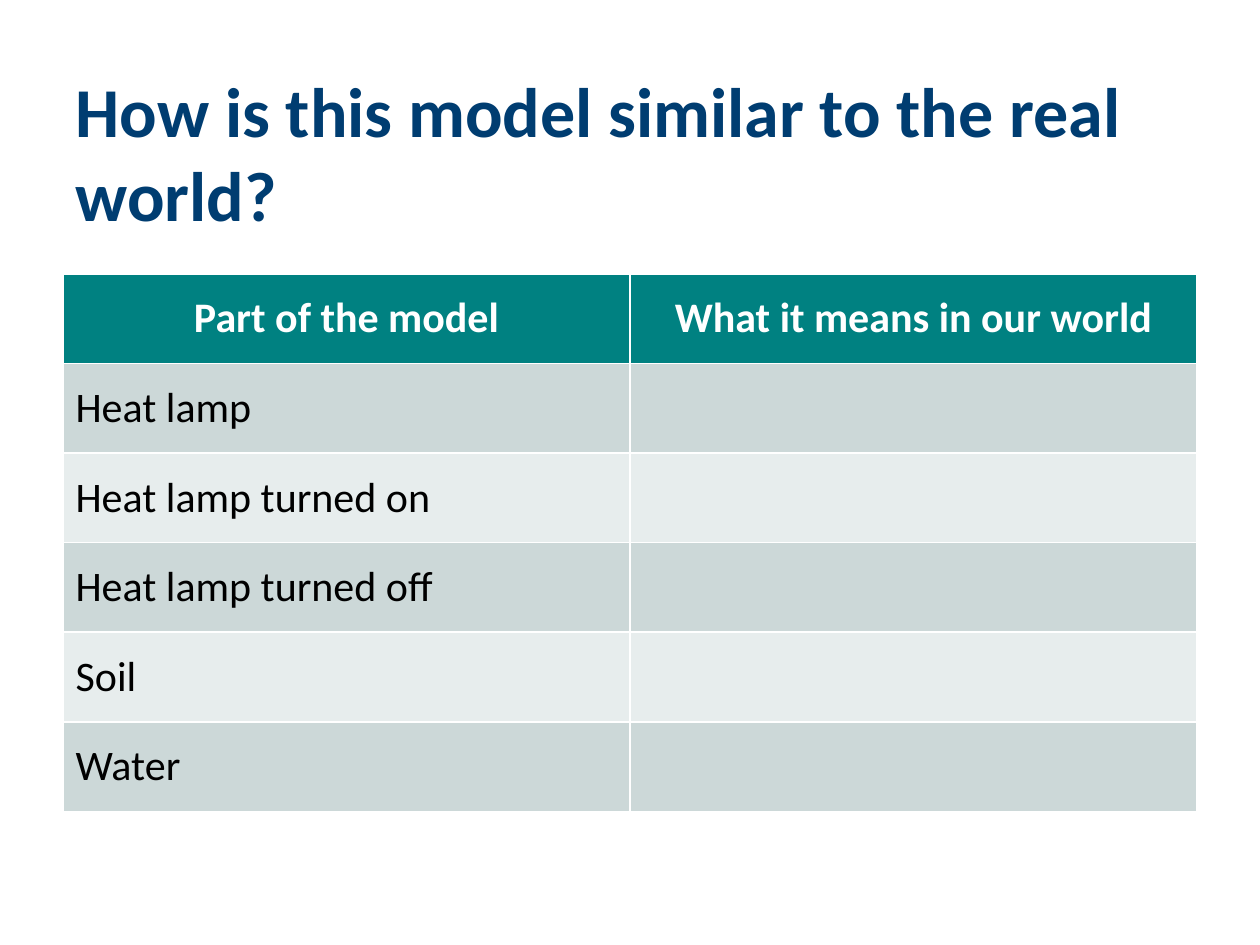
from pptx import Presentation
from pptx.dml.color import RGBColor
from pptx.enum.text import MSO_ANCHOR, PP_ALIGN
from pptx.util import Pt

NAVY = RGBColor(0x00, 0x3D, 0x71)
TEAL = RGBColor(0x00, 0x81, 0x81)
BAND_DARK = RGBColor(0xCC, 0xD8, 0xD8)
BAND_LIGHT = RGBColor(0xE7, 0xED, 0xED)
WHITE = RGBColor(0xFF, 0xFF, 0xFF)
BLACK = RGBColor(0x00, 0x00, 0x00)

HEADINGS = ["Part of the model", "What it means in our world"]
MODEL_PARTS = ["Heat lamp", "Heat lamp turned on", "Heat lamp turned off", "Soil", "Water"]
LEFT, WIDTH = Pt(36), Pt(648)
ROW_HEIGHT = Pt(51.2)


def format_paragraph(paragraph, color, alignment, **font_values):
    paragraph.alignment = alignment
    paragraph.font.color.rgb = color
    for name, value in {"name": "Calibri", **font_values}.items():
        setattr(paragraph.font, name, value)


prs = Presentation()
prs.slide_width, prs.slide_height = Pt(720), Pt(540)
slide = prs.slides.add_slide(prs.slide_layouts[5])

# Question
question = slide.shapes.title
question.left, question.top, question.width, question.height = LEFT, Pt(41.75), WIDTH, Pt(90)
question.text_frame.text = "How is this model similar to the real world?"
question.text_frame.vertical_anchor = MSO_ANCHOR.MIDDLE
format_paragraph(question.text_frame.paragraphs[0], NAVY, PP_ALIGN.LEFT, size=Pt(40), bold=True)

# Comparison table: the right column is left open for answers
rows = [HEADINGS] + [[part, ""] for part in MODEL_PARTS]
comparison = slide.shapes.add_table(
    len(rows), len(HEADINGS), LEFT, Pt(156.5), WIDTH, ROW_HEIGHT * len(rows)
).table

for row_index, row in enumerate(rows):
    is_header = row_index == 0
    band = BAND_DARK if row_index % 2 else BAND_LIGHT
    for column_index, wording in enumerate(row):
        cell = comparison.cell(row_index, column_index)
        cell.fill.solid()
        cell.fill.fore_color.rgb = TEAL if is_header else band
        cell.vertical_anchor = MSO_ANCHOR.MIDDLE
        cell.text = wording
        format_paragraph(
            cell.text_frame.paragraphs[0],
            WHITE if is_header else BLACK,
            PP_ALIGN.CENTER if is_header else PP_ALIGN.LEFT,
            size=Pt(24),
            bold=is_header,
        )

prs.save("out.pptx")
